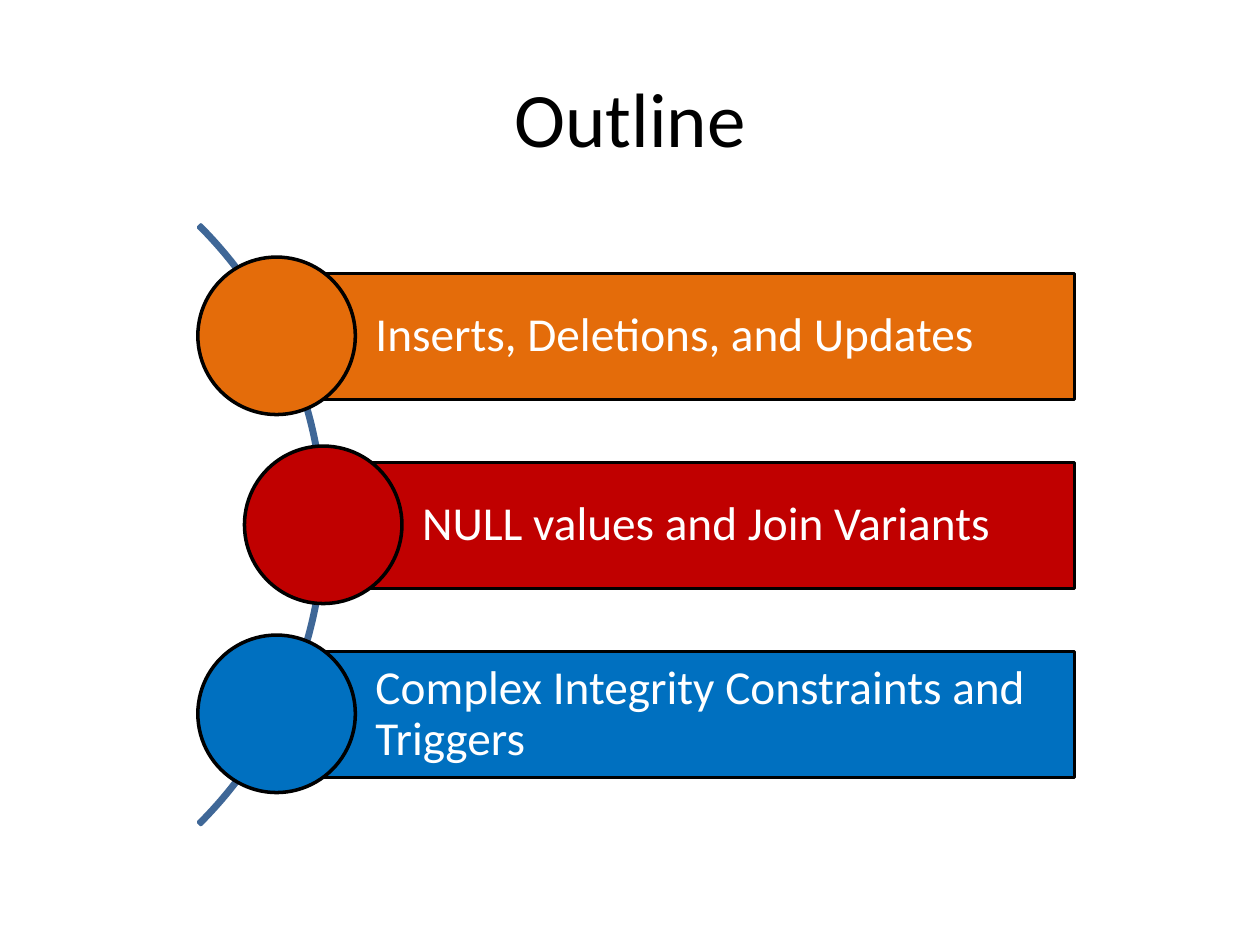
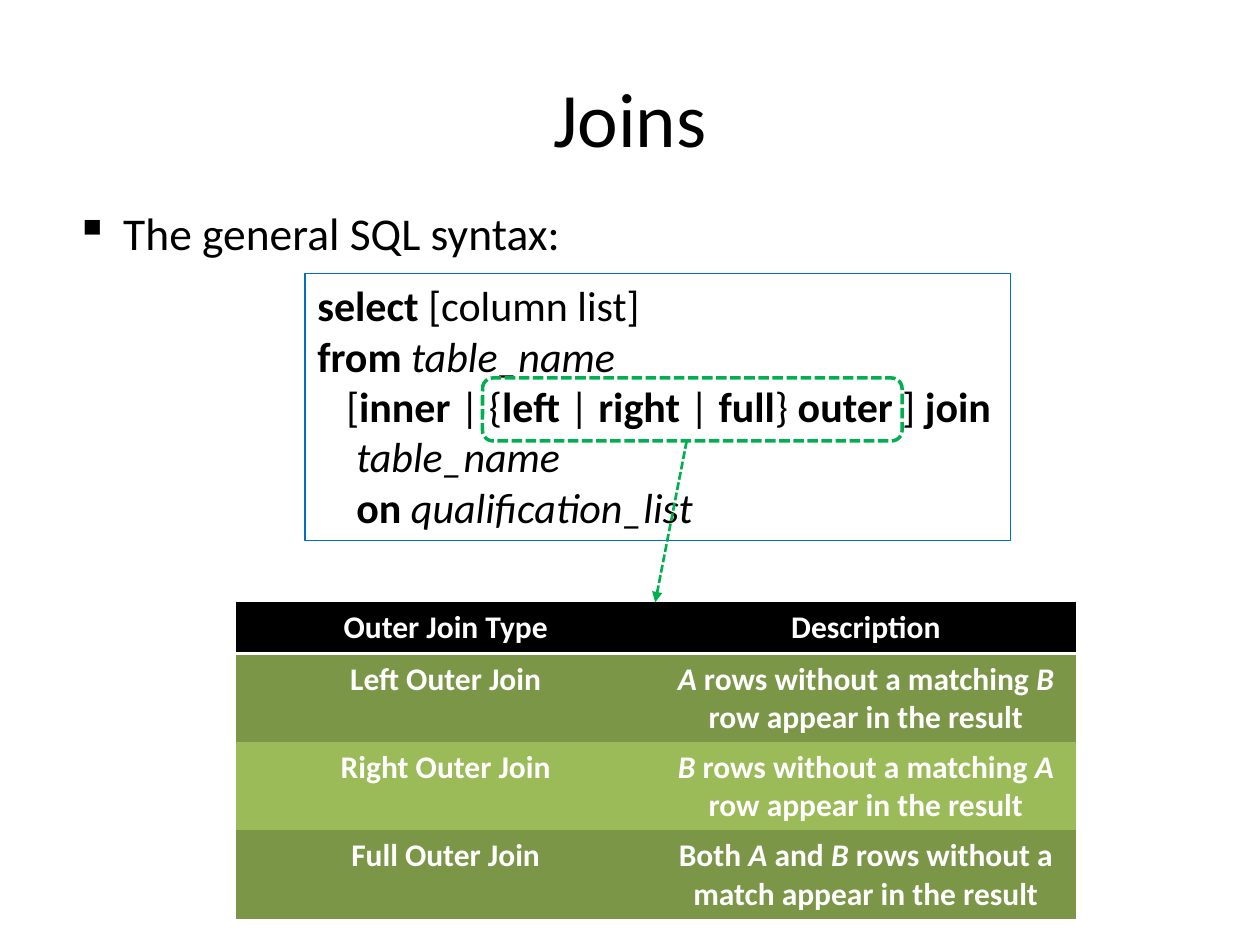
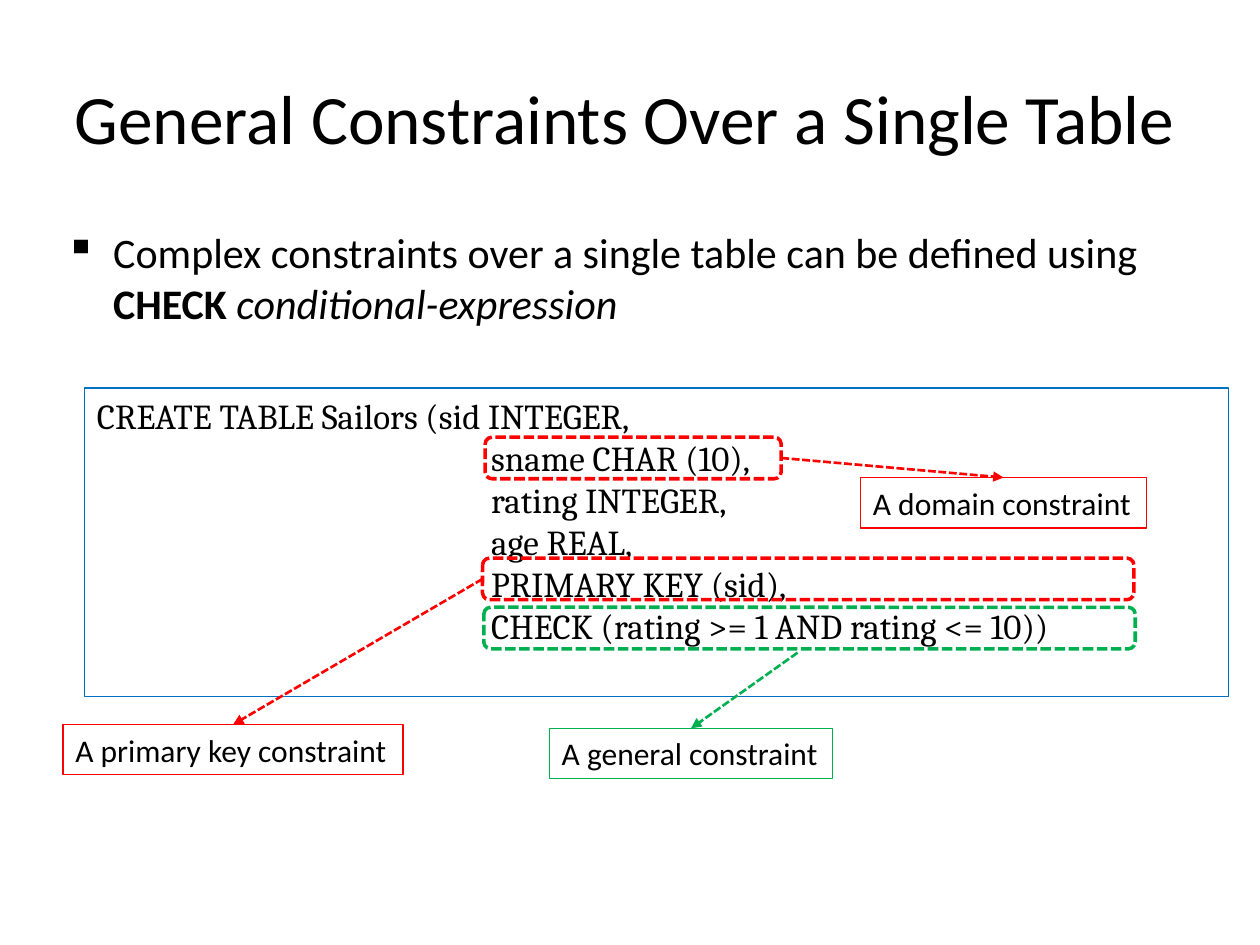
from dataclasses import dataclass

from lxml import etree
from pptx import Presentation
from pptx import util as u
from pptx.dml.color import RGBColor
from pptx.enum import dml, shapes, text
from pptx.oxml.ns import qn

PX = 9144  # one px is a hundredth of an inch
KIND = shapes.MSO_SHAPE
PLAIN = "{2D5ABB26-0587-4C30-8999-92F81FD0307C}"  # table style without grid


@dataclass(frozen=True)
class Theme:
    font: str = "Calibri"
    serif: str = "Cambria"
    black: str = "000000"
    white: str = "FFFFFF"
    orange: str = "E46C0A"
    crimson: str = "C00000"
    blue: str = "0070C0"
    steel: str = "3F6797"
    red: str = "FF0000"
    green: str = "00B050"
    olive: str = "7C9647"
    lime: str = "9BBB59"
    title: float = 44
    tight: float = 39.6
    step: float = 27
    lead: float = 26
    code: float = 24
    sql: float = 20
    note: float = 18


T = Theme()


def px(*nums):
    return [u.Emu(n * PX) for n in nums]


def rgb(hue):
    return RGBColor.from_string(hue)


def sub(node, tag, **attrs):
    return etree.SubElement(node, qn(tag), attrs)


def write(frame, paras, size=T.note, hue=T.black, font=T.font, bold=False,
          align=text.PP_ALIGN.LEFT, lead=None, dents=()):
    """Fill a frame; a paragraph is a string or a list of runs,
    and a run is a string or a (string, "b" or "i") pair."""
    for n, runs in enumerate(paras):
        para = frame.paragraphs[0] if n == 0 else frame.add_paragraph()
        para.alignment = align
        if lead:
            para.line_spacing = lead
        if dents and dents[n]:
            para._p.get_or_add_pPr().set("marL", str(dents[n] * PX))
        for item in [runs] if isinstance(runs, str) else runs:
            words, style = (item, "") if isinstance(item, str) else item
            run = para.add_run()
            run.text = words
            face = run.font
            face.name, face.size = font, u.Pt(size)
            face.color.rgb = rgb(hue)
            face.bold = bold or "b" in style
            face.italic = "i" in style


class Deck:
    """Holds the presentation and the slide being drawn."""

    def __init__(self):
        self.prs = Presentation()
        self.prs.slide_width, self.prs.slide_height = px(1000, 750)

    def page(self, title, left=50, wide=900, size=T.title):
        self.slide = self.prs.slides.add_slide(self.prs.slide_layouts[5])
        head = self.slide.shapes.title
        head.left, head.top, head.width, head.height = px(left, 30, wide, 125)
        frame = head.text_frame
        frame.auto_size = text.MSO_AUTO_SIZE.NONE
        frame.vertical_anchor = text.MSO_ANCHOR.MIDDLE
        write(frame, [title], size=size, align=text.PP_ALIGN.CENTER)

    def shape(self, kind, box, line, fill=None, width=0.75, dash=False):
        item = self.slide.shapes.add_shape(kind, *px(*box))
        item.shadow.inherit = False
        if fill:
            item.fill.solid()
            item.fill.fore_color.rgb = rgb(fill)
        else:
            item.fill.background()
        self.stroke(item.line, line, width, dash)
        return item

    def stroke(self, line, hue, width, dash):
        line.color.rgb = rgb(hue)
        line.width = u.Pt(width)
        if dash:
            line.dash_style = dml.MSO_LINE.SQUARE_DOT

    def panel(self, box, line, paras, wrap=False, **fmt):
        item = self.shape(KIND.RECTANGLE, box, line)
        frame = item.text_frame
        frame.word_wrap = wrap
        frame.vertical_anchor = text.MSO_ANCHOR.TOP
        write(frame, paras, **fmt)
        return item

    def ring(self, box, hue):
        """Outline a part of the code with dashes."""
        return self.shape(KIND.ROUNDED_RECTANGLE, box, hue, width=2, dash=True)

    def bullet(self, box, runs, size):
        frame = self.slide.shapes.add_textbox(*px(*box)).text_frame
        frame.word_wrap = True
        write(frame, [runs], size=size, dents=[38])
        props = frame.paragraphs[0]._p.get_or_add_pPr()
        props.set("indent", str(-38 * PX))
        sub(props, "a:buChar", char="▪")

    def arrow(self, start, end, hue):
        """Each end is an (x, y) point or a (shape, side) pair."""
        link = self.slide.shapes.add_connector(shapes.MSO_CONNECTOR.STRAIGHT, 0, 0, 0, 0)
        if isinstance(start[0], int):
            link.begin_x, link.begin_y = px(*start)
        else:
            link.begin_connect(*start)
        if isinstance(end[0], int):
            link.end_x, link.end_y = px(*end)
        else:
            link.end_connect(*end)
        self.stroke(link.line, hue, 1.5, True)
        sub(link.line._get_or_add_ln(), "a:tailEnd", type="triangle")
        sub(link._element.spPr, "a:effectLst")

    def table(self, box, rows, highs, fills):
        grid = self.slide.shapes.add_table(len(rows), len(rows[0]), *px(*box)).table
        grid.first_row = grid.horz_banding = False
        grid._tbl.tblPr.find(qn("a:tableStyleId")).text = PLAIN
        for r, row in enumerate(rows):
            grid.rows[r].height = px(highs[r])[0]
            for c, runs in enumerate(row):
                cell = grid.cell(r, c)
                write(cell.text_frame, [runs], hue=T.white, bold=True,
                      align=text.PP_ALIGN.CENTER)
                if r == 0:
                    edge = sub(cell._tc.get_or_add_tcPr(), "a:lnB", w=str(u.Pt(2)))
                    sub(sub(edge, "a:solidFill"), "a:srgbClr", val=T.white)
                cell.fill.solid()
                cell.fill.fore_color.rgb = rgb(fills[r])


def outline(deck):
    deck.page("Outline")
    arc = deck.shape(KIND.BLOCK_ARC, (-415, 80, 673, 673), T.steel, T.steel, 2)
    for n, value in enumerate((189, 27, 0.004)):
        arc.adjustments[n] = value
    steps = [
        ("Inserts, Deletions, and Updates", T.orange, 219),
        ("NULL values and Join Variants", T.crimson, 256),
        ("Complex Integrity Constraints and Triggers", T.blue, 219),
    ]
    for n, (words, hue, left) in enumerate(steps):
        top = 217 + 150 * n
        bar = deck.shape(KIND.RECTANGLE, (left, top, 853 - left, 100), T.black, hue, 2)
        frame = bar.text_frame
        frame.word_wrap = True
        frame.margin_left, frame.margin_right = px(79, 7)
        frame.margin_top, frame.margin_bottom = px(7, 7)
        write(frame, [words], size=T.step, hue=T.white, lead=0.9)
        deck.shape(KIND.OVAL, (left - 62, top - 13, 125, 125), T.black, hue, 2)


def joins(deck):
    deck.page("Joins")
    deck.bullet((50, 158, 900, 495), "The general SQL syntax:", T.lead)
    syntax = [
        [("select", "b"), " [column list]"],
        [("from ", "b"), ("table_name", "i")],
        ["[", ("inner", "b"), " | {", ("left", "b"), " | ", ("right", "b"), " | ",
         ("full", "b"), "} ", ("outer", "b"), " ] ", ("join", "b")],
        [("table_name", "i")],
        [("on ", "b"), ("qualification_list", "i")],
    ]
    deck.panel((242, 217, 560, 212), T.blue, syntax, size=T.code,
               dents=(0, 0, 23, 31, 31))
    a, b = ("A", "i"), ("B", "i")
    rows = [
        ["Outer Join Type", "Description"],
        ["Left Outer Join", [a, " rows without a matching ", b, " row appear in the result"]],
        ["Right Outer Join", [b, " rows without a matching ", a, " row appear in the result"]],
        ["Full Outer Join", ["Both ", a, " and ", b,
                             " rows without a match appear in the result"]],
    ]
    deck.table((187, 478, 667, 251), rows, (41, 70, 70, 70),
               (T.black, T.olive, T.lime, T.olive))
    deck.ring((383, 300, 333, 50), T.green)
    deck.arrow((545, 350), (520, 478), T.green)


def checks(deck):
    deck.page("General Constraints Over a Single Table", 17, 958, T.tight)
    deck.bullet((42, 175, 967, 495), [
        "Complex constraints over a single table can be defined using ",
        ("CHECK ", "b"), ("conditional-expression", "i")], T.code)
    lines = [
        "CREATE TABLE Sailors (sid INTEGER,",
        "sname CHAR (10),",
        "rating INTEGER,",
        "age REAL,",
        "PRIMARY KEY (sid),",
        "CHECK (rating >= 1 AND rating <= 10))",
    ]
    deck.panel((67, 308, 908, 245), T.blue, lines, wrap=True, size=T.sql,
               font=T.serif, dents=[0] + [313] * 5)
    key = deck.ring((383, 443, 517, 33), T.red)
    deck.ring((384, 482, 517, 33), T.green)
    field = deck.ring((385, 347, 235, 33), T.red)
    notes = [
        ("A primary key constraint", (50, 575, 270, 40), T.red, (key, 1)),
        ("A general constraint", (436, 578, 225, 40), T.green, (633, 518)),
        ("A domain constraint", (683, 379, 227, 40), T.red, (field, 3)),
    ]
    for words, box, hue, start in notes:
        note = deck.panel(box, hue, [words])
        deck.arrow(start, (note, 0), hue)


def main():
    deck = Deck()
    for draw in (outline, joins, checks):
        draw(deck)
    deck.prs.save("out.pptx")


if __name__ == "__main__":
    main()
